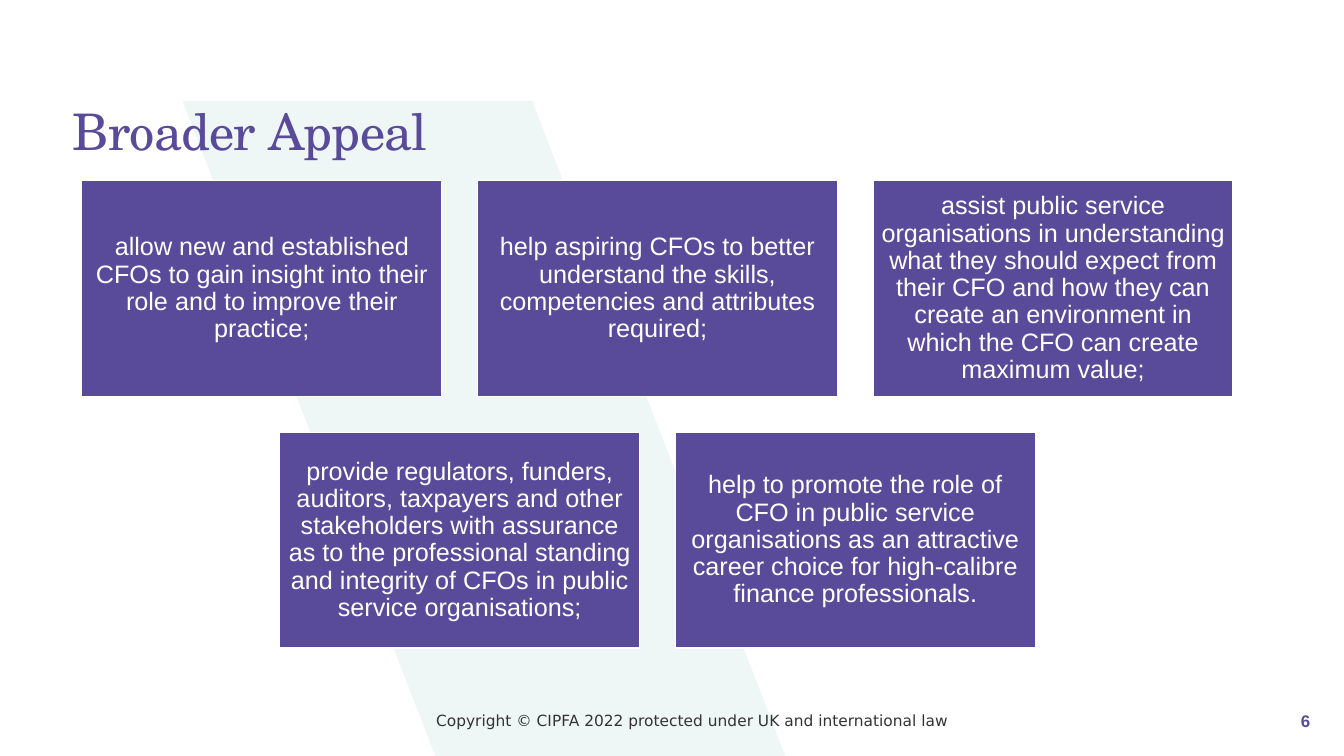
from pptx import Presentation
from pptx import util as u
from pptx.dml.color import RGBColor
from pptx.enum import shapes, text

# Content
TITLE = "Broader Appeal"
CARD_ROWS = [
    [
        "allow new and established CFOs to gain insight into their role and to improve their practice;",
        "help aspiring CFOs to better understand the skills, competencies and attributes required;",
        "assist public service organisations in understanding what they should expect from their CFO "
        "and how they can create an environment in which the CFO can create maximum value;",
    ],
    [
        "provide regulators, funders, auditors, taxpayers and other stakeholders with assurance as to "
        "the professional standing and integrity of CFOs in public service organisations;",
        "help to promote the role of CFO in public service organisations as an attractive career choice "
        "for high-calibre finance professionals.",
    ],
]
COPYRIGHT = "Copyright © CIPFA 2022 protected under UK and international law"
PAGE = "6"

# Style and layout (lengths in cm)
COLORS = {"purple": "5A4B9A", "mint": "EEF7F5", "white": "FFFFFF", "grey": "333333"}
BAND = [(13.41, 2.54), (4.6, 2.54), (10.97, 19.05), (19.79, 19.05)]
CARD_W, CARD_H, GAP = 9.07, 5.44, 0.9
CARDS_TOP, CARDS_CENTER = 4.55, 16.57
FOOTER_TOP, FOOTER_H = 17.65, 1.02


def color(name):
    return RGBColor.from_string(COLORS[name])


def add_run(p, words, size, font, color_name, bold=False):
    r = p.add_run()
    r.text = words
    r.font.size = u.Pt(size)
    r.font.name = font
    r.font.bold = bold
    r.font.color.rgb = color(color_name)
    return r


def set_frame(tf, margin, anchor):
    tf.word_wrap = True
    tf.auto_size = text.MSO_AUTO_SIZE.NONE
    tf.vertical_anchor = anchor
    tf.margin_left = tf.margin_right = u.Cm(margin)
    tf.margin_top = tf.margin_bottom = u.Cm(margin)


def add_card(s, left, top, words):
    sp = s.shapes.add_shape(shapes.MSO_SHAPE.RECTANGLE,
                            u.Cm(left), u.Cm(top), u.Cm(CARD_W), u.Cm(CARD_H))
    sp.shadow.inherit = False
    sp.fill.solid()
    sp.fill.fore_color.rgb = color("purple")
    sp.line.color.rgb = color("white")
    sp.line.width = u.Pt(0.85)
    set_frame(sp.text_frame, 0.18, text.MSO_ANCHOR.MIDDLE)
    p = sp.text_frame.paragraphs[0]
    p.alignment = text.PP_ALIGN.CENTER
    p.line_spacing = 0.9
    add_run(p, words, 18, "Arial", "white")


def add_footer(s, left, width, align, *run_args):
    box = s.shapes.add_textbox(u.Cm(left), u.Cm(FOOTER_TOP), u.Cm(width), u.Cm(FOOTER_H))
    tf = box.text_frame
    tf.word_wrap = True
    tf.vertical_anchor = text.MSO_ANCHOR.MIDDLE
    p = tf.paragraphs[0]
    p.alignment = align
    add_run(p, *run_args)


def main():
    prs = Presentation()
    prs.slide_width, prs.slide_height = u.Cm(33.87), u.Cm(19.05)
    s = prs.slides.add_slide(prs.slide_layouts[5])

    # Slanted background band, placed behind the title
    points = [(u.Cm(x), u.Cm(y)) for x, y in BAND]
    builder = s.shapes.build_freeform(*points[0])
    builder.add_line_segments(points[1:], close=True)
    band = builder.convert_to_shape()
    band.shadow.inherit = False
    band.fill.solid()
    band.fill.fore_color.rgb = color("mint")
    band.line.fill.background()
    title = s.shapes.title
    title._element.addprevious(band._element)

    # Title
    title.left, title.top = u.Cm(1.83), u.Cm(2.69)
    title.width, title.height = u.Cm(30.2), u.Cm(2.82)
    set_frame(title.text_frame, 0, text.MSO_ANCHOR.TOP)
    p = title.text_frame.paragraphs[0]
    p.alignment = text.PP_ALIGN.LEFT
    p.line_spacing = 0.9
    r = add_run(p, TITLE, 36, "TeX Gyre Schola", "purple")
    r._r.get_or_add_rPr().set("spc", "-60")

    # Cards, each row centred on the same axis
    for row, cards in enumerate(CARD_ROWS):
        row_w = len(cards) * (CARD_W + GAP) - GAP
        for col, words in enumerate(cards):
            add_card(s, CARDS_CENTER - row_w / 2 + col * (CARD_W + GAP),
                     CARDS_TOP + row * (CARD_H + GAP), words)

    # Footer
    add_footer(s, 10.74, 16.41, text.PP_ALIGN.LEFT, COPYRIGHT, 11, "DejaVu Sans", "grey")
    add_footer(s, 29.03, 4.24, text.PP_ALIGN.RIGHT, PAGE, 12, "Arial", "purple", True)

    prs.save("out.pptx")


if __name__ == "__main__":
    main()
